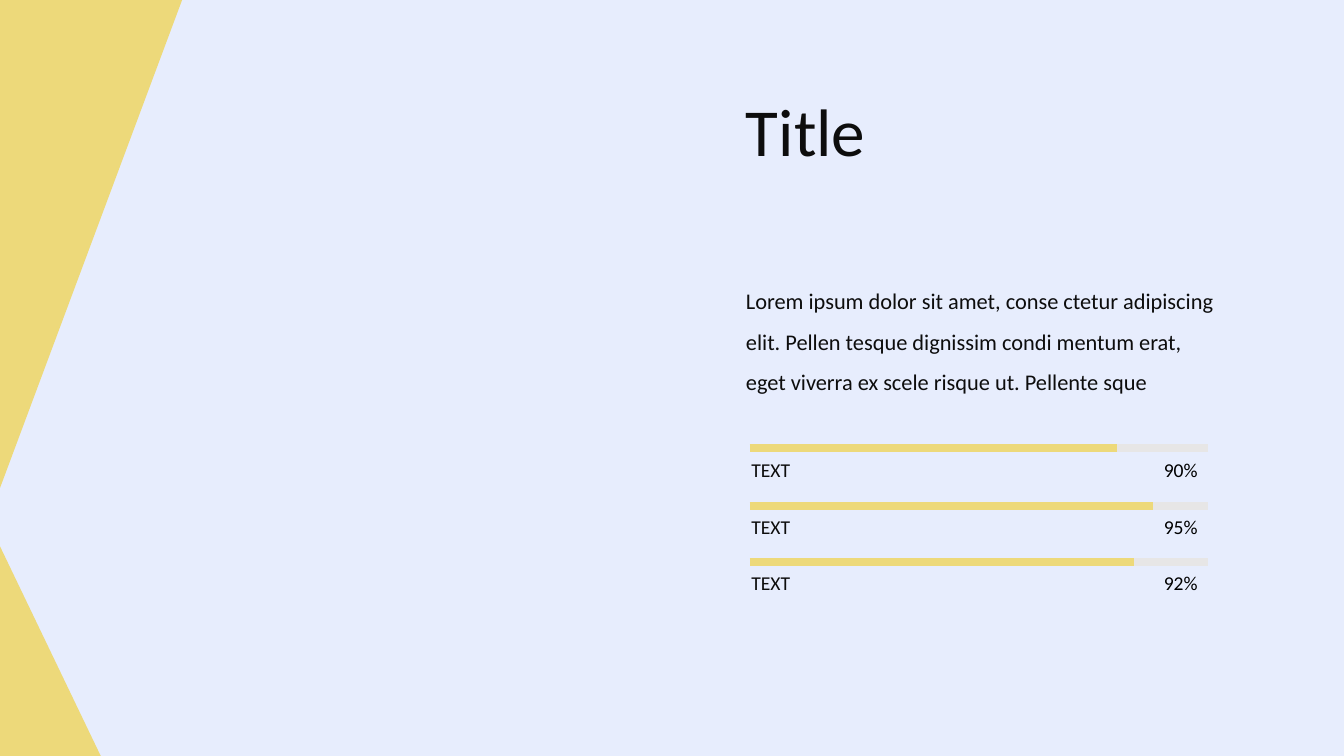
from dataclasses import dataclass

import pptx
import pptx.dml.color
import pptx.enum.shapes
import pptx.enum.text
import pptx.oxml.ns
import pptx.presentation
import pptx.shapes.autoshape
import pptx.slide
import pptx.util
from lxml import etree

Pt = pptx.util.Pt
Align = pptx.enum.text.PP_ALIGN

COLORS = {
    "background": "E7EDFD",
    "accent": "EDD97A",
    "track": "E7E6E6",
    "text": "0D0D0D",
    "value": "000000",
}
FONT = "Calibri"
BAR_LEFT = 535.7
BAR_RIGHT = 862.6
BAR_WEIGHT = 6
CAPTION_DROP = 3.1
CAPTION_HEIGHT = 26.4


@dataclass(frozen=True)
class Box:
    left: float
    top: float
    width: float
    height: float

    def lengths(self) -> tuple:
        return Pt(self.left), Pt(self.top), Pt(self.width), Pt(self.height)


@dataclass(frozen=True)
class Corner:
    box: Box
    upside_down: bool


@dataclass(frozen=True)
class ProgressBar:
    label: str
    value: str
    top: float
    fill_end: float


CORNERS = [
    Corner(Box(0, 390.2, 72, 149.8), False),
    Corner(Box(0, -0.7, 130.3, 349.2), True),
]
PROGRESS_BARS = [
    ProgressBar("TEXT", "90%", 320.2, 797.8),
    ProgressBar("TEXT", "95%", 361.3, 823.7),
    ProgressBar("TEXT", "92%", 401.3, 810),
]
BODY_TEXT = (
    "Lorem ipsum dolor sit amet, conse ctetur adipiscing elit. "
    "Pellen tesque dignissim condi mentum erat, eget viverra ex "
    "scele risque ut. Pellente sque"
)


def rgb(name: str) -> pptx.dml.color.RGBColor:
    return pptx.dml.color.RGBColor.from_string(COLORS[name])


def write_text(
    shape: pptx.shapes.autoshape.Shape,
    text: str,
    size: float,
    color: str = "text",
    alignment: Align = Align.LEFT,
    line_spacing: float = 1.0,
) -> None:
    frame = shape.text_frame
    frame.word_wrap = True
    frame.auto_size = pptx.enum.text.MSO_AUTO_SIZE.SHAPE_TO_FIT_TEXT
    frame.vertical_anchor = pptx.enum.text.MSO_ANCHOR.TOP
    paragraph = frame.paragraphs[0]
    paragraph.alignment = alignment
    paragraph.line_spacing = line_spacing
    paragraph.space_before = Pt(0)
    run = paragraph.add_run()
    run.text = text
    run.font.name = FONT
    run.font.size = Pt(size)
    run.font.color.rgb = rgb(color)


def place(shape: pptx.shapes.autoshape.Shape, box: Box) -> None:
    shape.left, shape.top, shape.width, shape.height = box.lengths()


def remove_bullet(shape: pptx.shapes.autoshape.Shape) -> None:
    properties = shape.text_frame.paragraphs[0]._p.get_or_add_pPr()
    properties.set("marL", "0")
    properties.set("indent", "0")
    etree.SubElement(properties, pptx.oxml.ns.qn("a:buNone"))


def draw_corner(slide: pptx.slide.Slide, corner: Corner) -> None:
    shape = slide.shapes.add_shape(
        pptx.enum.shapes.MSO_SHAPE.RIGHT_TRIANGLE, *corner.box.lengths()
    )
    shape.shadow.inherit = False
    shape.fill.solid()
    shape.fill.fore_color.rgb = rgb("accent")
    shape.line.fill.background()
    if corner.upside_down:
        shape.rotation = 180
        shape.element.spPr.xfrm.set("flipH", "1")


def draw_line(slide: pptx.slide.Slide, top: float, end: float, color: str) -> None:
    connector = slide.shapes.add_connector(
        pptx.enum.shapes.MSO_CONNECTOR.STRAIGHT,
        Pt(BAR_LEFT), Pt(top), Pt(end), Pt(top),
    )
    connector.line.color.rgb = rgb(color)
    connector.line.width = Pt(BAR_WEIGHT)
    etree.SubElement(connector.element.spPr, pptx.oxml.ns.qn("a:effectLst"))


def draw_progress_bar(slide: pptx.slide.Slide, bar: ProgressBar) -> None:
    draw_line(slide, bar.top, BAR_RIGHT, "track")
    draw_line(slide, bar.top, bar.fill_end, "accent")
    caption_top = bar.top + CAPTION_DROP
    value_box = Box(810, caption_top, 52.6, CAPTION_HEIGHT)
    label_box = Box(529.6, caption_top, 85.7, CAPTION_HEIGHT)
    value = slide.shapes.add_textbox(*value_box.lengths())
    write_text(value, bar.value, 14, "value", Align.RIGHT)
    label = slide.shapes.add_textbox(*label_box.lengths())
    write_text(label, bar.label, 14)


def build_slide(presentation: pptx.presentation.Presentation) -> None:
    slide = presentation.slides.add_slide(presentation.slide_layouts[1])
    slide.background.fill.solid()
    slide.background.fill.fore_color.rgb = rgb("background")

    title = slide.shapes.title
    place(title, Box(525.6, 60.5, 274.3, 65.5))
    write_text(title, "Title", 48)

    body = slide.placeholders[1]
    place(body, Box(525.6, 192.2, 349.9, 91.4))
    write_text(body, BODY_TEXT, 16, line_spacing=1.5)
    remove_bullet(body)

    for corner in CORNERS:
        draw_corner(slide, corner)
    for bar in PROGRESS_BARS:
        draw_progress_bar(slide, bar)


def main() -> None:
    presentation = pptx.Presentation()
    presentation.slide_width = Pt(960)
    presentation.slide_height = Pt(540)
    build_slide(presentation)
    presentation.save("out.pptx")


if __name__ == "__main__":
    main()
